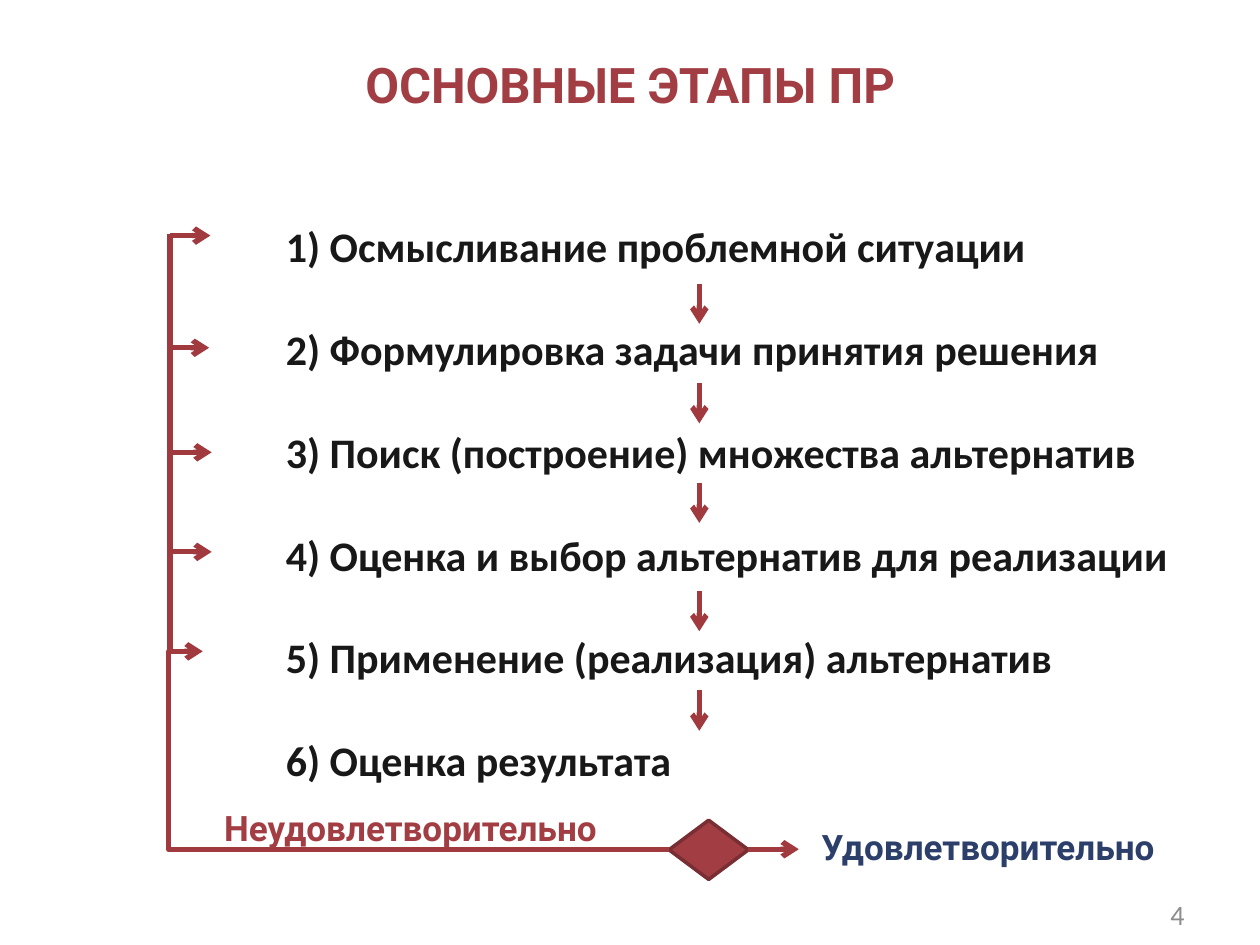
"""Build the slide with the main stages of decision making and their feedback loop."""
import pptx
import pptx.dml.color
import pptx.enum.shapes
import pptx.enum.text
import pptx.oxml
import pptx.oxml.ns
import pptx.util
from pptx.util import Inches

RED = pptx.dml.color.RGBColor(0xA2, 0x3E, 0x43)
ARROW_RED = pptx.dml.color.RGBColor(0xA1, 0x3A, 0x3F)
DARK_RED = pptx.dml.color.RGBColor(0x78, 0x2E, 0x32)
NAVY = pptx.dml.color.RGBColor(0x2B, 0x3F, 0x6A)
BLACK = pptx.dml.color.RGBColor(0x18, 0x18, 0x18)
GREY = pptx.dml.color.RGBColor(0x8C, 0x8C, 0x8C)
ALIGN = pptx.enum.text.PP_ALIGN
ANCHOR = pptx.enum.text.MSO_ANCHOR
CONNECTOR = pptx.enum.shapes.MSO_CONNECTOR

STAGES = [
    "1) Осмысливание проблемной ситуации",
    "2) Формулировка задачи принятия решения",
    "3) Поиск (построение) множества альтернатив",
    "4) Оценка и выбор альтернатив для реализации",
    "5) Применение (реализация) альтернатив",
    "6) Оценка результата",
]

presentation = pptx.Presentation()
presentation.slide_width = Inches(10)
presentation.slide_height = Inches(7.5)
slide = presentation.slides.add_slide(presentation.slide_layouts[5])


def write(holder, lines, font, align=ALIGN.LEFT, anchor=ANCHOR.TOP, space_after=0):
    frame = holder.text_frame
    frame.word_wrap = True
    frame.vertical_anchor = anchor
    frame.text = "\n".join(lines)
    for paragraph in frame.paragraphs:
        paragraph.alignment = align
        paragraph.space_after = pptx.util.Pt(space_after)
        for run in paragraph.runs:
            color = font["color"]
            run.font.color.rgb = color
            for attribute in ("name", "size", "bold"):
                setattr(run.font, attribute, font[attribute])


def connect(start, end, kind=CONNECTOR.STRAIGHT, arrow=True):
    link = slide.shapes.add_connector(kind, *map(Inches, start + end))
    link.line.color.rgb = ARROW_RED
    link.line.width = pptx.util.Pt(3)
    properties = link._element.spPr
    if arrow:
        tail = pptx.oxml.parse_xml(f'<a:tailEnd {pptx.oxml.ns.nsdecls("a")} type="arrow"/>')
        link.line._get_or_add_ln().append(tail)
    properties.append(pptx.oxml.parse_xml(f'<a:effectLst {pptx.oxml.ns.nsdecls("a")}/>'))
    return link


heading = slide.shapes.title
placement = {"left": 0.5, "top": 0.2, "width": 9, "height": 0.93}
for attribute, value in placement.items():
    setattr(heading, attribute, Inches(value))
heading_font = {"name": "Roboto", "size": pptx.util.Pt(28), "bold": True, "color": RED}
write(heading, ["ОСНОВНЫЕ ЭТАПЫ ПР"], heading_font, ALIGN.CENTER, ANCHOR.MIDDLE)

page_number = slide.shapes.add_textbox(*map(Inches, (8.94, 7.06, 0.56, 0.4)))
page_font = {"name": "Calibri", "size": pptx.util.Pt(16), "bold": False, "color": GREY}
write(page_number, ["4"], page_font, ALIGN.RIGHT, ANCHOR.MIDDLE)

stage_list = slide.shapes.add_textbox(*map(Inches, (2.17, 1.7, 7.32, 4.63)))
stage_font = {"name": "Calibri", "size": pptx.util.Pt(24), "bold": True, "color": BLACK}
write(stage_list, STAGES, stage_font, space_after=30)

for top in (2.25, 3.04, 3.83, 4.69, 5.48):
    connect((5.55, top), (5.55, top + 0.32))

decision = slide.shapes.add_shape(
    pptx.enum.shapes.MSO_SHAPE.FLOWCHART_DECISION, *map(Inches, (5.31, 6.51, 0.63, 0.47))
)
decision.shadow.inherit = False
decision.fill.solid()
decision.fill.fore_color.rgb = RED
decision.line.color.rgb = DARK_RED
decision.line.width = pptx.util.Pt(2)

connect((5.94, 6.74), (6.34, 6.74))
feedback = connect((5.31, 6.74), (1.61, 5.17), CONNECTOR.ELBOW)
bend = pptx.oxml.parse_xml(
    f'<a:gd {pptx.oxml.ns.nsdecls("a")} name="adj1" fmla="val 107300"/>'
)
feedback._element.spPr.prstGeom.get_or_add_avLst().append(bend)
connect((1.35, 5.17), (1.35, 1.86), arrow=False)
for left, top in ((1.35, 1.87), (1.34, 2.76), (1.36, 3.59), (1.36, 4.38)):
    connect((left, top), (left + 0.32, top))

outcomes = [
    ("Удовлетворительно", (6.42, 6.5, 3.07, 0.44), NAVY),
    ("Неудовлетворительно", (1.68, 6.35, 3.48, 0.44), RED),
]
for label, bounds, color in outcomes:
    outcome = slide.shapes.add_textbox(*map(Inches, bounds))
    outcome_font = {"name": "Roboto", "size": pptx.util.Pt(20), "bold": True, "color": color}
    write(outcome, [label], outcome_font)

presentation.save("out.pptx")
